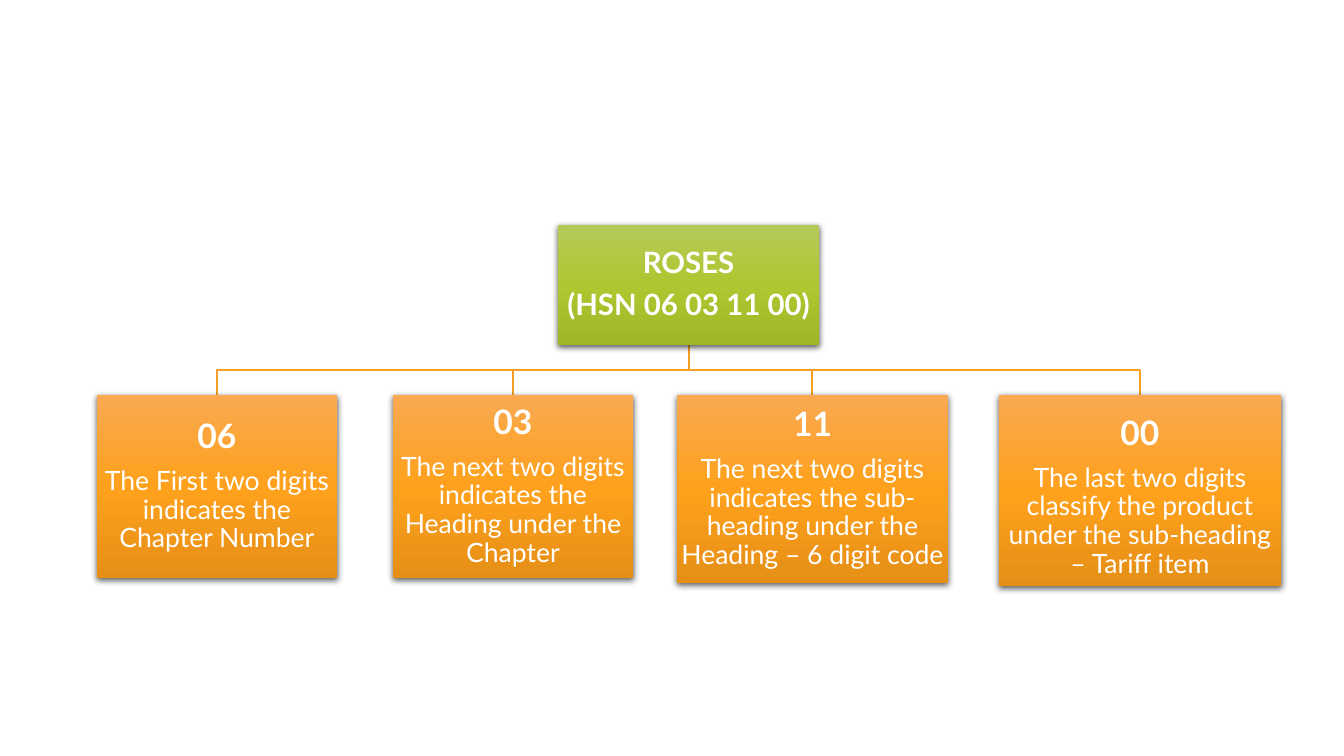
from copy import deepcopy

from lxml.etree import SubElement
from pptx import Presentation
from pptx.dml.color import RGBColor
from pptx.enum.shapes import MSO_SHAPE as Preset
from pptx.enum.text import MSO_ANCHOR as Anchor, PP_ALIGN as Align
from pptx.oxml.ns import qn
from pptx.util import Pt

PX = 12192000 / 1344
WHITE = RGBColor(0xFF, 0xFF, 0xFF)
BRANCH = RGBColor(0xF5, 0x9F, 0x26)
GREENS = [RGBColor(0xB4, 0xCA, 0x58), RGBColor(0xAE, 0xC7, 0x31), RGBColor(0x9E, 0xB7, 0x26)]
ORANGES = [RGBColor(0xF9, 0xA9, 0x52), RGBColor(0xFF, 0xA1, 0x1C), RGBColor(0xE5, 0x8F, 0x17)]


def emu(px):
    return round(px * PX)


def add_card(left, top, width, height, shades, lines, side=2, head=2):
    card = slide.shapes.add_shape(Preset.RECTANGLE, emu(left), emu(top), emu(width), emu(height))
    card.line.fill.background()
    card.fill.gradient()
    card.fill.gradient_angle = 270
    stops = card._element.spPr.find(".//" + qn("a:gsLst"))
    stops.insert(1, deepcopy(stops[0]))
    for stop, shade, position in zip(card.fill.gradient_stops, shades, (0, 0.5, 1)):
        stop.color.rgb = shade
        stop.position = position

    card.shadow.inherit = False
    effects = card._element.spPr.find(qn("a:effectLst"))
    shadow = SubElement(effects, qn("a:outerShdw"), blurRad="57150", dist="19050",
                        dir="5400000", algn="ctr", rotWithShape="0")
    black = SubElement(shadow, qn("a:srgbClr"), val="000000")
    SubElement(black, qn("a:alpha"), val="63000")

    frame = card.text_frame
    frame.word_wrap = True
    frame.vertical_anchor = Anchor.MIDDLE
    frame.margin_left = frame.margin_right = frame.margin_bottom = emu(side)
    frame.margin_top = emu(head)
    for index, (wording, size, bold) in enumerate(lines):
        paragraph = frame.add_paragraph() if index else frame.paragraphs[0]
        paragraph.alignment = Align.CENTER
        paragraph.line_spacing = 0.9
        paragraph.space_after = Pt(size * 0.35)
        run = paragraph.add_run()
        run.text = wording
        run.font.name = "Lato"
        run.font.size = Pt(size)
        run.font.bold = bold
        run.font.color.rgb = WHITE


deck = Presentation()
deck.slide_width = emu(1344)
deck.slide_height = emu(756)
slide = deck.slides.add_slide(deck.slide_layouts[6])

root_center, root_bottom, bus, digits_top = 689, 345, 370, 395
digit_pairs = [
    (97, 240, 183, 2, 2, "06", "The First two digits indicates the Chapter Number"),
    (393, 240, 183, 2, 2, "03", "The next two digits indicates the Heading under the Chapter"),
    (677, 271, 188, 2, 2, "11",
     "The next two digits indicates the sub-heading under the Heading – 6 digit code"),
    (999, 282, 191, 0, 14, "00",
     "The last two digits classify the product under the sub-heading – Tariff item"),
]

for left, width, *_ in digit_pairs:
    center = left + width // 2
    outline = slide.shapes.build_freeform(root_center, root_bottom, scale=PX)
    outline.add_line_segments(
        [(root_center, bus), (center, bus), (center, digits_top)], close=False)
    branch = outline.convert_to_shape()
    branch.fill.background()
    branch.line.color.rgb = BRANCH
    branch.line.width = Pt(1)
    branch.shadow.inherit = False

add_card(558, 225, 261, 120, GREENS,
         [("ROSES", 21, True), ("(HSN 06 03 11 00)", 21, True)], side=1, head=1)

for left, width, height, side, head, digits, meaning in digit_pairs:
    add_card(left, digits_top, width, height, ORANGES,
             [(digits, 24, True), (meaning, 19, False)], side, head)

deck.save("out.pptx")
